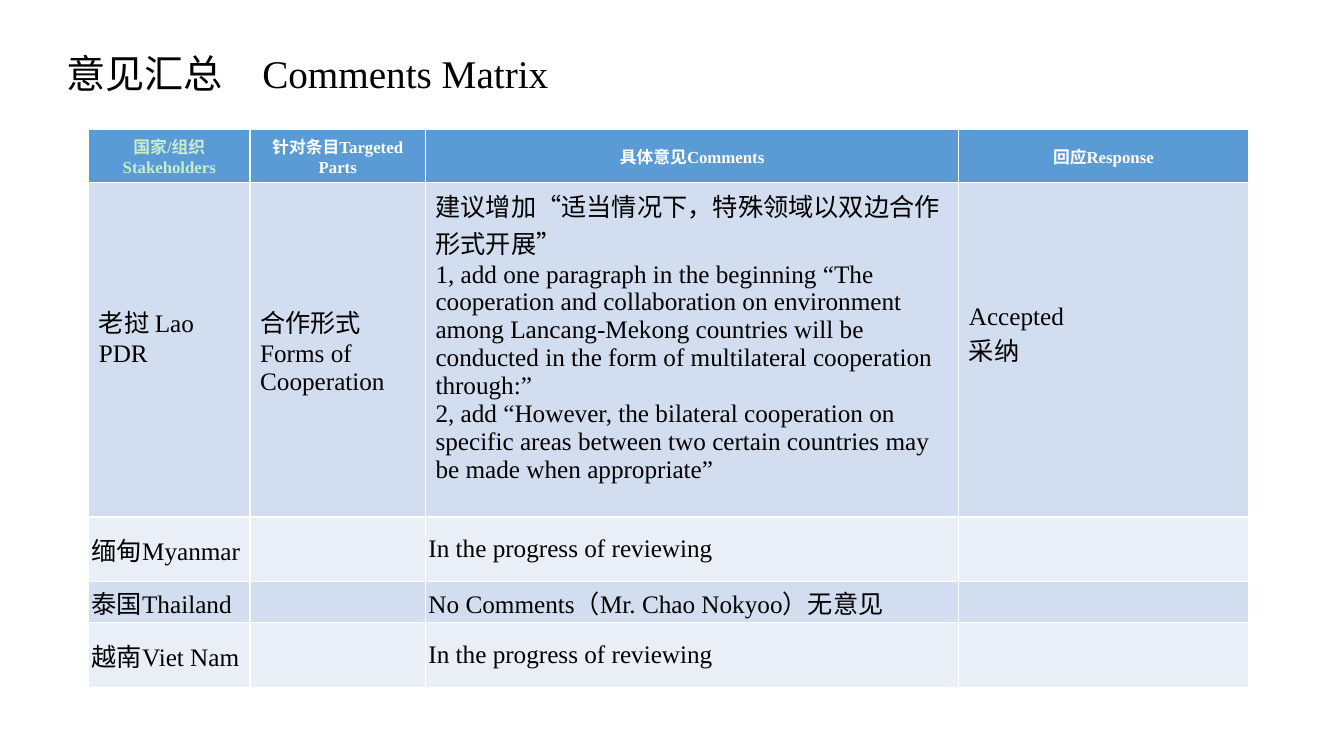
import pptx
import pptx.dml.color
import pptx.enum.text
import pptx.util

Inches = pptx.util.Inches
RGBColor = pptx.dml.color.RGBColor
Align = pptx.enum.text.PP_ALIGN
MIDDLE = pptx.enum.text.MSO_ANCHOR.MIDDLE

FONT = "Times New Roman"
BLACK = RGBColor(0x00, 0x00, 0x00)
WHITE = RGBColor(0xFF, 0xFF, 0xFF)
PALE_GREEN = RGBColor(0xC7, 0xED, 0xCC)
HEADER_BLUE = RGBColor(0x5B, 0x9B, 0xD5)
BAND_FILLS = (RGBColor(0xEA, 0xEF, 0xF7), RGBColor(0xD2, 0xDE, 0xEF))

COLUMN_WIDTHS = (1.6, 1.74, 5.29, 2.87)
ROW_HEIGHTS = (0.53, 3.32, 0.64, 0.41, 0.64)
HEADERS = ("国家/组织Stakeholders", "针对条目Targeted Parts",
           "具体意见Comments", "回应Response")
LAOS_ROW = (
    "老挝 Lao PDR",
    "合作形式\nForms of Cooperation",
    "建议增加“适当情况下，特殊领域以双边合作形式开展”\n"
    "1, add one paragraph in the beginning “The cooperation and collaboration "
    "on environment among Lancang-Mekong countries will be conducted in the "
    "form of multilateral cooperation through:”\n"
    "2, add “However, the bilateral cooperation on specific areas between two "
    "certain countries may be made when appropriate”",
    "Accepted\n采纳",
)
SHORT_ROWS = (
    ("缅甸Myanmar", "", "In the progress of reviewing", ""),
    ("泰国Thailand", "", "No Comments（Mr. Chao Nokyoo）无意见", ""),
    ("越南Viet Nam", "", "In the progress of reviewing", ""),
)


def format_text(frame, size, color, align, bold=False):
    for para in frame.paragraphs:
        para.alignment = align
        for span in para.runs:
            span.font.name = FONT
            span.font.size = pptx.util.Pt(size)
            span.font.bold = bold
            span.font.color.rgb = color


def fill_cell(cell, text, fill, size, color, align, bold=False):
    cell.fill.solid()
    cell.fill.fore_color.rgb = fill
    cell.vertical_anchor = MIDDLE
    cell.text_frame.text = text
    format_text(cell.text_frame, size, color, align, bold)


def add_title(page, left, top, width, height):
    title = page.shapes.title
    title.left, title.top = Inches(left), Inches(top)
    title.width, title.height = Inches(width), Inches(height)
    frame = title.text_frame
    frame.text = "意见汇总　Comments Matrix"
    frame.vertical_anchor = MIDDLE
    frame.paragraphs[0].line_spacing = 0.9
    format_text(frame, 28, BLACK, Align.LEFT)


def add_comments_table(page, left, top):
    rows = (HEADERS, LAOS_ROW) + SHORT_ROWS
    table = page.shapes.add_table(
        len(rows), len(HEADERS), Inches(left), Inches(top),
        Inches(sum(COLUMN_WIDTHS)), Inches(sum(ROW_HEIGHTS))).table
    for column, width in zip(table.columns, COLUMN_WIDTHS):
        column.width = Inches(width)
    for row, height in zip(table.rows, ROW_HEIGHTS):
        row.height = Inches(height)

    for column_index, header in enumerate(HEADERS):
        color = PALE_GREEN if column_index == 0 else WHITE
        fill_cell(table.cell(0, column_index), header, HEADER_BLUE, 12,
                  color, Align.CENTER, bold=True)

    for row_index, texts in enumerate(rows[1:], start=1):
        is_short = row_index > 1
        align = Align.JUSTIFY if is_short else Align.LEFT
        for column_index, text in enumerate(texts):
            cell = table.cell(row_index, column_index)
            fill_cell(cell, text, BAND_FILLS[row_index % 2], 18, BLACK, align)
            if is_short:
                cell.margin_left = cell.margin_right = Inches(0.03)
                cell.margin_top = cell.margin_bottom = 0
            elif column_index != 1:
                cell.margin_bottom = Inches(0.33)


def main():
    deck = pptx.Presentation()
    deck.slide_width, deck.slide_height = Inches(13.33), Inches(7.5)
    page = deck.slides.add_slide(deck.slide_layouts.get_by_name("Title Only"))
    page.background.fill.solid()
    page.background.fill.fore_color.rgb = WHITE
    add_title(page, 0.56, 0.23, 11.5, 1.05)
    add_comments_table(page, 0.88, 1.28)
    deck.save("out.pptx")


if __name__ == "__main__":
    main()
